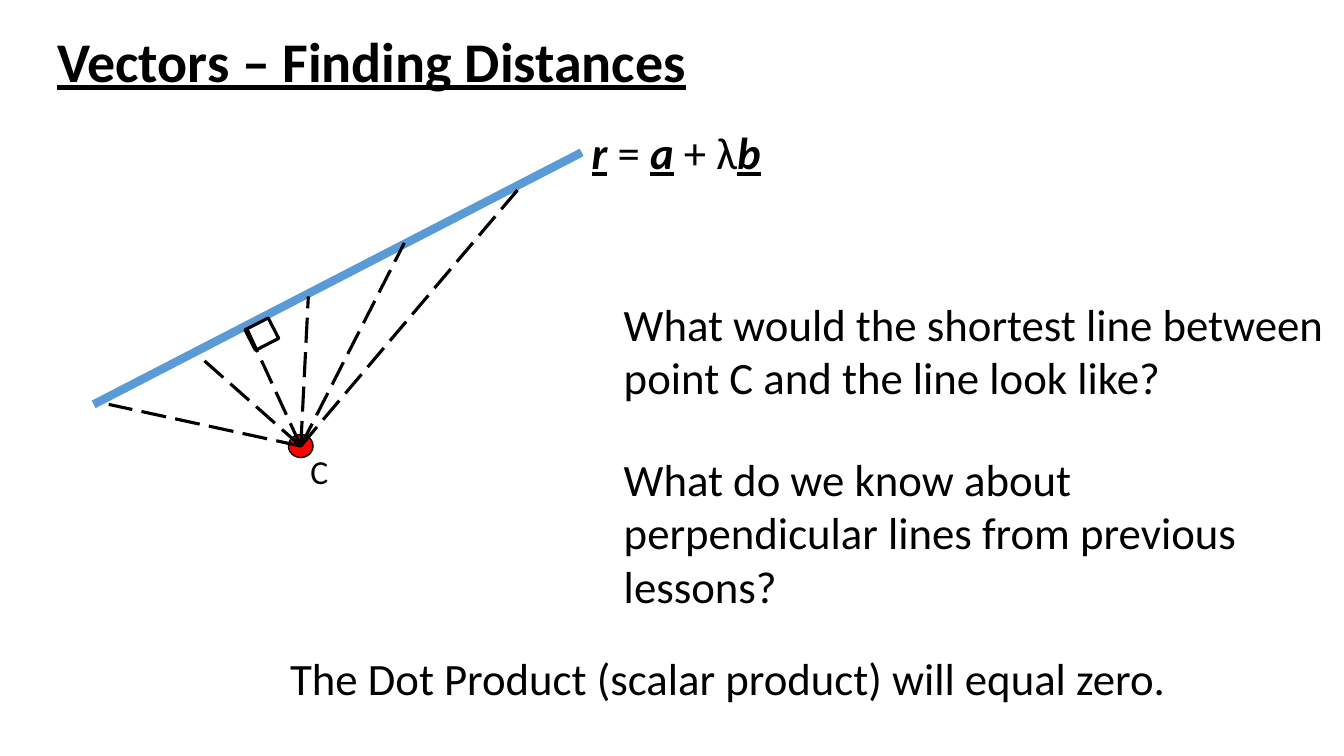
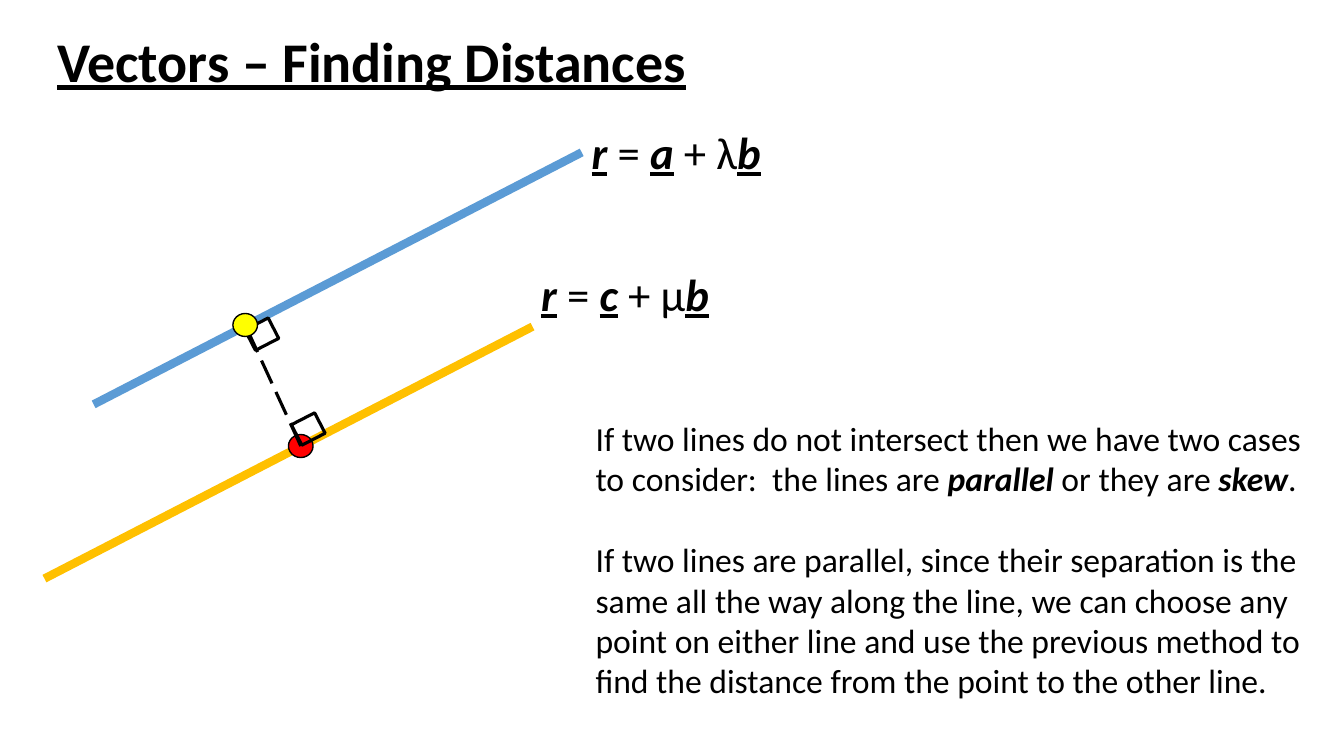
from lxml.etree import SubElement
from pptx import Presentation
from pptx.dml.color import RGBColor
from pptx.enum.dml import MSO_LINE
from pptx.enum.shapes import MSO_CONNECTOR, MSO_SHAPE
from pptx.enum.text import MSO_ANCHOR, MSO_AUTO_SIZE, PP_ALIGN
from pptx.oxml.ns import qn
from pptx.util import Cm, Pt

FONT = "Calibri"
BLACK, BLUE, GOLD, RED, YELLOW = "000000", "5B9BD5", "FFC000", "FF0000", "FFFF00"
TITLE = "Vectors – Finding Distances"
LINE_RUN, LINE_RISE = 12.3, 6.35
BLUE_START, GOLD_START = (2.36, 10.19), (1.12, 14.58)
POINT_C = (7.58, 11.24)
FOOT = (6.22, 8.28)
DASH_ENDS = [(10.19, 6.12), (13.16, 4.65), (2.74, 10.19), (7.77, 7.47), (4.98, 8.94), FOOT]
FOOT_ANGLE, POINT_ANGLE = (6.6, 8.42), (7.77, 10.81)


def colour(value):
    """Turn a hex string into a colour."""
    return RGBColor.from_string(value)


def write_text(shape, *paragraphs, size=32, style="", wrap=True, gap=0):
    """Write paragraphs of strings or (text, style) runs; b, i and u mark the style."""
    frame = shape.text_frame
    frame.word_wrap = wrap
    frame.auto_size = MSO_AUTO_SIZE.SHAPE_TO_FIT_TEXT
    frame.vertical_anchor = MSO_ANCHOR.TOP
    for index, runs in enumerate(paragraphs):
        paragraph = frame.add_paragraph() if index else frame.paragraphs[0]
        paragraph.alignment = PP_ALIGN.LEFT
        paragraph.space_before = Pt(gap if index else 0)
        for item in [runs] if isinstance(runs, str) else runs:
            text, marks = (item, style) if isinstance(item, str) else item
            run = paragraph.add_run()
            run.text = text
            font = run.font
            font.name, font.size = FONT, Pt(size)
            font.color.rgb = colour(BLACK)
            font.bold, font.italic, font.underline = (mark in marks for mark in "biu")


def add_text(slide, left, top, width, height, *paragraphs, **text_format):
    """Add a text box."""
    box = slide.shapes.add_textbox(Cm(left), Cm(top), Cm(width), Cm(height))
    write_text(box, *paragraphs, **text_format)


def add_equation(slide, left, top, point, parameter):
    """Add the vector equation of a line with direction b."""
    runs = [("r", "biu"), " = ", (point, "biu"), f" + {parameter}", ("b", "biu")]
    add_text(slide, left, top, 4.83, 1.63, runs, wrap=False)


def add_line(slide, start, end, line=BLACK, width=2.25, dash=None):
    """Add a straight line between two points."""
    connector = slide.shapes.add_connector(
        MSO_CONNECTOR.STRAIGHT, *(Cm(value) for value in (*start, *end)))
    connector.line.color.rgb = colour(line)
    connector.line.width = Pt(width)
    if dash:
        connector.line.dash_style = dash
    SubElement(connector._element.spPr, qn("a:effectLst"))


def add_vector_line(slide, start, line):
    """Add a thick line with the shared direction."""
    x, y = start
    add_line(slide, start, (x + LINE_RUN, y - LINE_RISE), line, 6)


def add_dash(slide, end):
    """Add a dashed line from point C."""
    add_line(slide, POINT_C, end, dash=MSO_LINE.LONG_DASH)


def add_centred(slide, kind, centre, width, height, line_width, fill=None, rotation=0):
    """Add an outlined shape around a centre."""
    x, y = centre
    shape = slide.shapes.add_shape(
        kind, Cm(x - width / 2), Cm(y - height / 2), Cm(width), Cm(height))
    shape.shadow.inherit = False
    shape.rotation = rotation
    shape.line.color.rgb = colour(BLACK)
    shape.line.width = Pt(line_width)
    if fill:
        shape.fill.solid()
        shape.fill.fore_color.rgb = colour(fill)
    else:
        shape.fill.background()


def add_dot(slide, centre, fill):
    """Add a filled point marker."""
    add_centred(slide, MSO_SHAPE.OVAL, centre, 0.62, 0.58, 1, fill)


def add_right_angle(slide, centre):
    """Add a right-angle mark turned to the shared direction."""
    add_centred(slide, MSO_SHAPE.RECTANGLE, centre, 0.66, 0.58, 2.25, rotation=332.8)


def add_slide(presentation):
    """Add a titled slide."""
    slide = presentation.slides.add_slide(presentation.slide_layouts[5])
    title = slide.shapes.title
    title.left, title.top, title.width, title.height = Cm(1.19), Cm(0.53), Cm(16.54), Cm(1.96)
    write_text(title, TITLE, size=40, style="bu", wrap=False)
    return slide


def build_point_slide(presentation):
    """Build the slide on the distance from a point to a line."""
    slide = add_slide(presentation)
    add_vector_line(slide, BLUE_START, BLUE)
    add_dot(slide, POINT_C, RED)
    add_equation(slide, 14.66, 3.02, "a", "λ")
    add_text(slide, 15.47, 7.34, 18.39, 3,
             "What would the shortest line between point C and the line look like?")
    add_text(slide, 7.57, 11.25, 0.97, 1.27, "C", size=24, wrap=False)
    for end in DASH_ENDS:
        add_dash(slide, end)
    add_text(slide, 15.47, 11.25, 18.39, 5.74,
             "What do we know about perpendicular lines from previous lessons?")
    add_right_angle(slide, FOOT_ANGLE)
    add_text(slide, 7.06, 16.26, 22.81, 1.63,
             "The Dot Product (scalar product) will equal zero.", wrap=False)


def build_parallel_slide(presentation):
    """Build the slide on the distance between parallel lines."""
    slide = add_slide(presentation)
    add_vector_line(slide, GOLD_START, GOLD)
    add_vector_line(slide, BLUE_START, BLUE)
    add_dot(slide, POINT_C, RED)
    add_dash(slide, FOOT)
    add_right_angle(slide, FOOT_ANGLE)
    add_text(slide, 14.76, 10.41, 18.67, 7.44,
             ["If two lines do not intersect then we have two cases to consider:  the lines are ",
              ("parallel", "bi"), " or they are ", ("skew", "bi"), "."],
             "If two lines are parallel, since their separation is the same all the way along "
             "the line, we can choose any point on either line and use the previous method to "
             "find the distance from the point to the other line.",
             size=24, gap=29)
    add_dot(slide, (6.18, 8.19), YELLOW)
    add_equation(slide, 14.66, 3.02, "a", "λ")
    add_right_angle(slide, POINT_ANGLE)
    add_equation(slide, 13.39, 6.6, "c", "μ")


def main():
    """Build and save the presentation."""
    presentation = Presentation()
    presentation.slide_width, presentation.slide_height = Cm(33.87), Cm(19.05)
    build_point_slide(presentation)
    build_parallel_slide(presentation)
    presentation.save("out.pptx")


if __name__ == "__main__":
    main()
